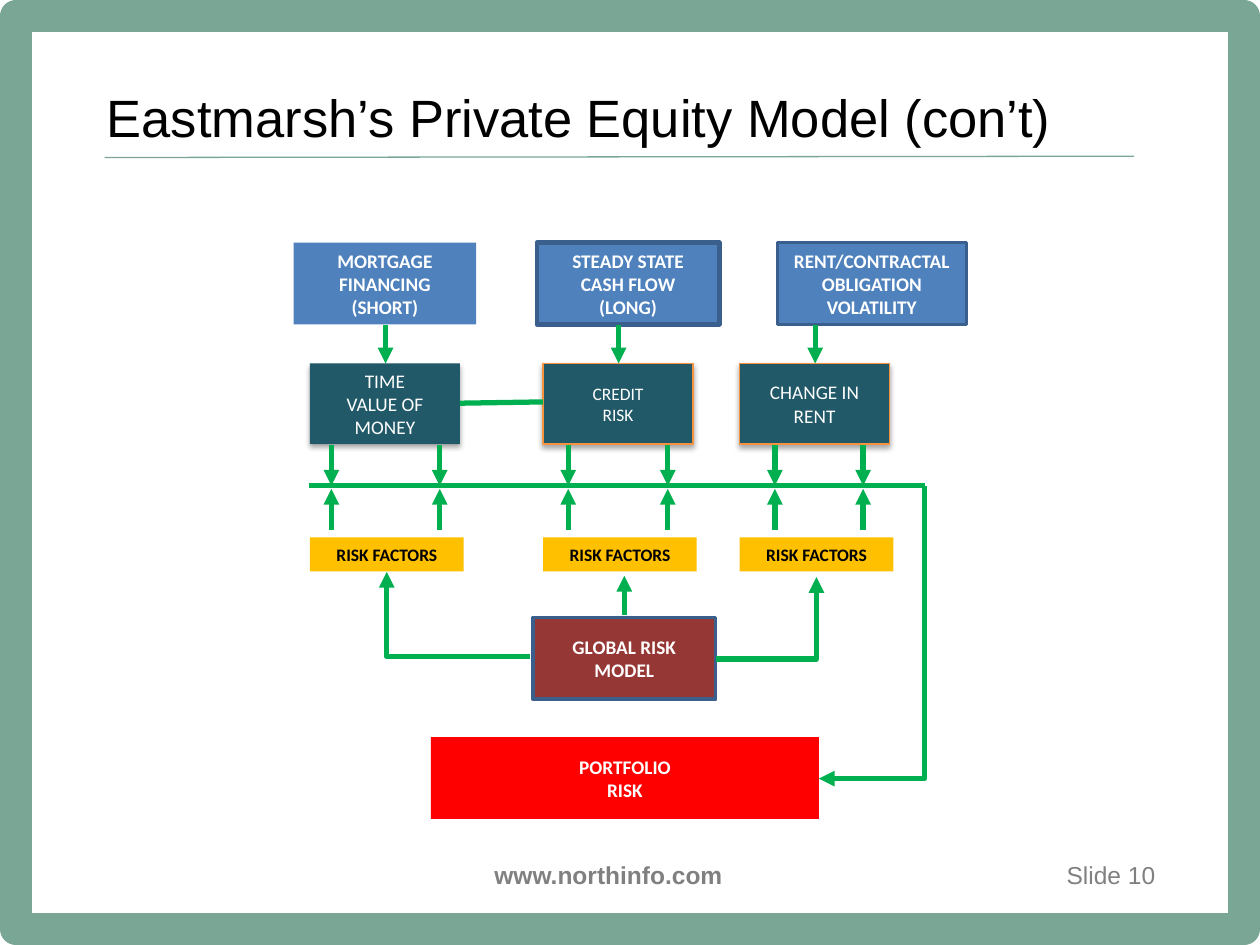
from dataclasses import dataclass

from lxml import etree
from pptx import Presentation
from pptx.dml.color import RGBColor
from pptx.enum.shapes import MSO_CONNECTOR, MSO_SHAPE
from pptx.enum.text import MSO_ANCHOR, PP_ALIGN
from pptx.oxml.ns import qn
from pptx.util import Inches, Pt

RECTANGLE = MSO_SHAPE.RECTANGLE
STRAIGHT, ELBOW = MSO_CONNECTOR.STRAIGHT, MSO_CONNECTOR.ELBOW
LEFT, CENTER, RIGHT = PP_ALIGN.LEFT, PP_ALIGN.CENTER, PP_ALIGN.RIGHT
MIDDLE = MSO_ANCHOR.MIDDLE
CELL = 0.1  # inches per grid column and row
COLUMNS, ROWS = 100, 75


@dataclass(frozen=True)
class Theme:
    heading_font: str = "Arial"
    diagram_font: str = "Calibri"
    title_size: float = 30
    footer_size: float = 14
    label_size: float = 11
    small_size: float = 10
    frame: str = "7AA696"
    black: str = "000000"
    white: str = "FFFFFF"
    grey: str = "808080"
    blue: str = "4F81BD"
    blue_edge: str = "3A5F8C"
    teal: str = "215968"
    orange_edge: str = "F69240"
    amber: str = "FFC000"
    maroon: str = "953735"
    red: str = "FF0000"
    green: str = "00B050"


THEME = Theme()


@dataclass(frozen=True)
class Box:
    """A region of the page, measured in grid columns and rows."""
    left: float
    top: float
    width: float
    height: float

    def inner(self, left, top, width, height):
        return Box(self.left + left, self.top + top, width, height)

    def point(self, column, row):
        return Inches((self.left + column) * CELL), Inches((self.top + row) * CELL)

    def extent(self):
        return (*self.point(0, 0), Inches(self.width * CELL), Inches(self.height * CELL))


def color(value):
    return RGBColor.from_string(value)


def write(shape, text, size, ink, font, bold=False, align=CENTER, inset=0.1):
    frame = shape.text_frame
    frame.word_wrap = True
    frame.vertical_anchor = MIDDLE
    frame.margin_left = frame.margin_right = Inches(inset)
    frame.text = text
    for para in frame.paragraphs:
        para.alignment = align
        para.font.size = Pt(size)
        para.font.name = font
        para.font.bold = bold
        para.font.color.rgb = color(ink)


def add_text(page, box, text, size, ink, **style):
    write(page.shapes.add_textbox(*box.extent()), text, size, ink,
          THEME.heading_font, **style)


def add_rectangle(page, box, fill=None, edge=None, edge_width=2):
    shape = page.shapes.add_shape(RECTANGLE, *box.extent())
    shape.shadow.inherit = False
    if fill:
        shape.fill.solid()
        shape.fill.fore_color.rgb = color(fill)
    else:
        shape.fill.background()
    if edge:
        shape.line.color.rgb = color(edge)
        shape.line.width = Pt(edge_width)
    else:
        shape.line.fill.background()
    return shape


def add_node(page, box, text, fill, ink=THEME.white, size=THEME.label_size,
             bold=True, edge=None, edge_width=2):
    shape = add_rectangle(page, box, fill, edge, edge_width)
    write(shape, text, size, ink, THEME.diagram_font, bold)
    return shape


def add_soft_shadow(shape):
    effects = shape._element.spPr.find(qn("a:effectLst"))
    shadow = etree.SubElement(effects, qn("a:outerShdw"), blurRad=str(Pt(3.1)),
                              dist=str(Pt(1.8)), dir="5400000", rotWithShape="0")
    tint = etree.SubElement(shadow, qn("a:srgbClr"), val=THEME.black)
    etree.SubElement(tint, qn("a:alpha"), val="35000")


def add_line(page, box, start, end, ink=THEME.green, width=3, kind=STRAIGHT, tip=None):
    """Draw a connector; tip is "tailEnd" for an arrow at end, "headEnd" at start."""
    line = page.shapes.add_connector(kind, *box.point(*start), *box.point(*end))
    line.line.color.rgb = color(ink)
    line.line.width = Pt(width)
    properties = line._element.spPr
    if tip:
        etree.SubElement(properties.find(qn("a:ln")), qn("a:" + tip), type="triangle")
    etree.SubElement(properties, qn("a:effectLst"))
    return line


def add_arrow(page, box, start, end):
    add_line(page, box, start, end, tip="tailEnd")


def add_corner(page, box, start, end, tip="tailEnd"):
    """Run level from start to the column of end, then upright to end."""
    line = add_line(page, box, start, end, kind=ELBOW, tip=tip)
    guides = line._element.spPr.find(qn("a:prstGeom")).get_or_add_avLst()
    etree.SubElement(guides, qn("a:gd"), name="adj1", fmla="val 100000")


def draw_frame(page, box):
    add_rectangle(page, box.inner(1.25, 1.25, box.width - 2.5, box.height - 2.5),
                  edge=THEME.frame, edge_width=18)


def draw_header(page, box):
    add_line(page, box, (0.8, 6.7), (82.5, 6.6), THEME.frame, 0.75)
    add_text(page, box.inner(0, 0, box.width, 6.9),
             "Eastmarsh’s Private Equity Model (con’t)",
             THEME.title_size, THEME.black, align=LEFT)


def draw_footer(page, box):
    add_text(page, box.inner(0, 0, 25.6, box.height), "www.northinfo.com",
             THEME.footer_size, THEME.grey, bold=True)
    add_text(page, box.inner(46.2, 0, 10, box.height), "Slide 10",
             THEME.footer_size, THEME.grey, align=RIGHT, inset=0)


# Driver: left, width, text, edge width. Risk: left, text, size, edge.
# Then the columns of the arrow between them and of the arrows at the bus.
FACTOR_COLUMNS = (
    ((0.3, 14.5, "MORTGAGE\nFINANCING\n(SHORT)", 0),
     (1.6, "TIME\nVALUE OF\nMONEY", THEME.label_size, None), 7.6, (3.3, 11.9)),
    ((19.6, 14.5, "STEADY STATE\nCASH FLOW\n(LONG)", 2.5),
     (20.1, "CREDIT\nRISK", THEME.small_size, THEME.orange_edge), 26.1, (22.1, 30)),
    ((38.7, 15, "RENT/CONTRACTAL OBLIGATION\nVOLATILITY", 2),
     (28.7 + 7, "CHANGE IN\nRENT", THEME.label_size, THEME.orange_edge), 41.7,
     (38.5, 45.5)),
)
BUS_ROW = 19.55


def draw_factor_column(page, box, driver, risk, link, feeds):
    driver_left, driver_width, driver_text, edge_width = driver
    risk_left, risk_text, risk_size, risk_edge = risk
    add_node(page, box.inner(driver_left, 0.25, driver_width, 6.5), driver_text,
             THEME.blue, edge=THEME.blue_edge if edge_width else None,
             edge_width=edge_width)
    add_arrow(page, box, (link, 6.8), (link, 9.85))
    add_soft_shadow(add_node(page, box.inner(risk_left, 9.85, 11.9, 6.4), risk_text,
                             THEME.teal, size=risk_size, bold=False,
                             edge=risk_edge, edge_width=0.75))
    for feed in feeds:
        add_arrow(page, box, (feed, 16.3), (feed, BUS_ROW))
        add_arrow(page, box, (feed, 23.1), (feed, BUS_ROW + 0.25))
    add_node(page, box.inner(risk_left, 23.65, 12.2, 2.7), "RISK FACTORS",
             THEME.amber, ink=THEME.black, size=THEME.small_size)


def draw_diagram(page, box):
    for column in FACTOR_COLUMNS:
        draw_factor_column(page, box, *column)
    add_line(page, box, (13.5, 13), (20.1, 12.9))
    add_line(page, box, (1.5, BUS_ROW), (50.4, BUS_ROW))
    add_node(page, box.inner(19.3, 30, 14.5, 6.5), "GLOBAL RISK MODEL",
             THEME.maroon, edge=THEME.blue_edge)
    add_arrow(page, box, (26.55, 29.8), (26.55, 26.7))
    add_corner(page, box, (19.1, 33.1), (7.7, 26.4))
    add_corner(page, box, (33.8, 33.3), (41.8, 26.8))
    add_node(page, box.inner(11.2, 39.5, 30.8, 6.5), "PORTFOLIO\nRISK", THEME.red)
    add_corner(page, box, (42, 42.8), (50.4, BUS_ROW), tip="headEnd")


def main():
    deck = Presentation()
    deck.slide_width = Inches(COLUMNS * CELL)
    deck.slide_height = Inches(ROWS * CELL)
    page = deck.slides.add_slide(deck.slide_layouts[6])
    draw_frame(page, Box(0, 0, COLUMNS, ROWS))
    draw_header(page, Box(7.5, 5.8, 90, 6.9))
    draw_footer(page, Box(35.5, 67.8, 56.2, 3.3))
    draw_diagram(page, Box(23, 19, 54, 46))
    deck.save("out.pptx")


if __name__ == "__main__":
    main()
